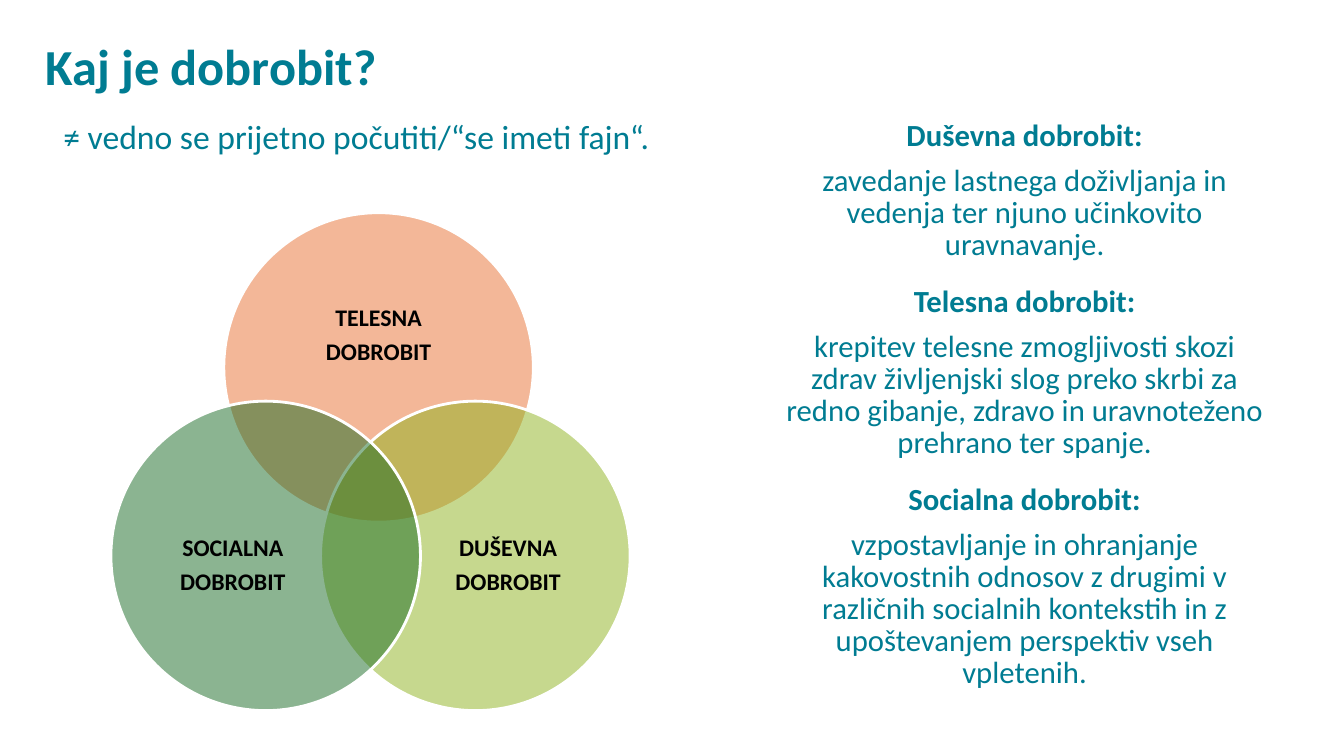
from lxml import etree
from pptx import Presentation
from pptx.dml.color import RGBColor
from pptx.enum.shapes import MSO_SHAPE
from pptx.enum.text import MSO_ANCHOR, PP_ALIGN
from pptx.oxml.ns import qn
from pptx.util import Inches, Pt

OVAL = MSO_SHAPE.OVAL
TOP, MIDDLE = MSO_ANCHOR.TOP, MSO_ANCHOR.MIDDLE
LEFT, CENTER = PP_ALIGN.LEFT, PP_ALIGN.CENTER

TEAL, BLACK, WHITE = "007C92", "000000", "FFFFFF"
DIAMETER = 23.03  # percent of the slide width

# label, fill, circle centre, label centre, label size (percent of the slide)
CIRCLES = [
    ("TELESNA", "E97132", (28.17, 48.6), (28.17, 44.4), (16.88, 18.4)),
    ("DUŠEVNA", "8EB21E", (35.37, 73.53), (37.81, 74.87), (13.8, 22.53)),
    ("SOCIALNA", "196B24", (19.77, 73.53), (17.33, 74.87), (13.8, 22.53)),
]

DEFINITIONS = [
    ("Duševna dobrobit:",
     "zavedanje lastnega doživljanja in vedenja ter njuno učinkovito uravnavanje."),
    ("Telesna dobrobit:",
     "krepitev telesne zmogljivosti skozi zdrav življenjski slog preko skrbi za "
     "redno gibanje, zdravo in uravnoteženo prehrano ter spanje."),
    ("Socialna dobrobit:",
     "vzpostavljanje in ohranjanje kakovostnih odnosov z drugimi v različnih "
     "socialnih kontekstih in z upoštevanjem perspektiv vseh vpletenih."),
]


def color(value):
    return RGBColor.from_string(value)


class SlideBuilder:
    """Places elements by percent of the slide's width and height."""

    font = "Calibri"

    def __init__(self, deck):
        self.deck = deck
        self.page = deck.slides.add_slide(deck.slide_layouts[6])

    def across(self, share):
        return round(self.deck.slide_width * share / 100)

    def down(self, share):
        return round(self.deck.slide_height * share / 100)

    def text_box(self, left, top, width, height, anchor=TOP, inset=True):
        box = self.page.shapes.add_textbox(
            self.across(left), self.down(top), self.across(width), self.down(height))
        frame = box.text_frame
        frame.word_wrap = True
        frame.vertical_anchor = anchor
        if not inset:
            frame.margin_left = frame.margin_right = 0
            frame.margin_top = frame.margin_bottom = 0
        return frame

    def paragraph(self, frame, text, size, tint=TEAL, bold=False, align=LEFT,
                  spacing=0.9, before=0, after=0):
        first = frame.paragraphs[0]
        is_first = not first.runs
        para = first if is_first else frame.add_paragraph()
        para.add_run().text = text
        para.alignment = align
        para.line_spacing = spacing
        para.space_before = Pt(0 if is_first else before)
        para.space_after = Pt(after)
        para.font.name = self.font
        para.font.size = Pt(size)
        para.font.bold = bold
        para.font.color.rgb = color(tint)

    def circle(self, center, fill, opacity=50):
        side = self.across(DIAMETER)
        shape = self.page.shapes.add_shape(
            OVAL, self.across(center[0]) - side // 2,
            self.down(center[1]) - side // 2, side, side)
        shape.shadow.inherit = False
        shape.fill.solid()
        shape.fill.fore_color.rgb = color(fill)
        tone = shape.fill._xPr.find(qn("a:solidFill"))[0]
        etree.SubElement(tone, qn("a:alpha")).set("val", str(opacity * 1000))
        shape.line.color.rgb = color(WHITE)
        shape.line.width = Pt(2)

    def label(self, center, size, lines):
        frame = self.text_box(center[0] - size[0] / 2, center[1] - size[1] / 2,
                              *size, anchor=MIDDLE, inset=False)
        for line in lines:
            self.paragraph(frame, line, 17, BLACK, bold=True, align=CENTER, after=6)


def main():
    deck = Presentation()
    deck.slide_width, deck.slide_height = Inches(13.33), Inches(7.5)
    slide = SlideBuilder(deck)

    # Title and opening statement
    title = slide.text_box(2.63, 2.8, 86.25, 12.8, anchor=MIDDLE)
    slide.paragraph(title, "Kaj je dobrobit?", 36, bold=True)
    statement = slide.text_box(3.98, 15.33, 86.25, 66.4)
    slide.paragraph(statement, "≠ vedno se prijetno počutiti/“se imeti fajn“.", 24)

    # Overlapping circles
    for name, fill, center, label_center, label_size in CIRCLES:
        slide.circle(center, fill)
        slide.label(label_center, label_size, (name, "DOBROBIT"))

    # Definitions
    column = slide.text_box(57.68, 15.33, 37.13, 80.27)
    for heading, meaning in DEFINITIONS:
        slide.paragraph(column, heading, 21.9, bold=True, align=CENTER,
                        spacing=0.87, before=9)
        slide.paragraph(column, meaning, 21.9, align=CENTER,
                        spacing=0.87, before=9, after=9)

    deck.save("out.pptx")


if __name__ == "__main__":
    main()
